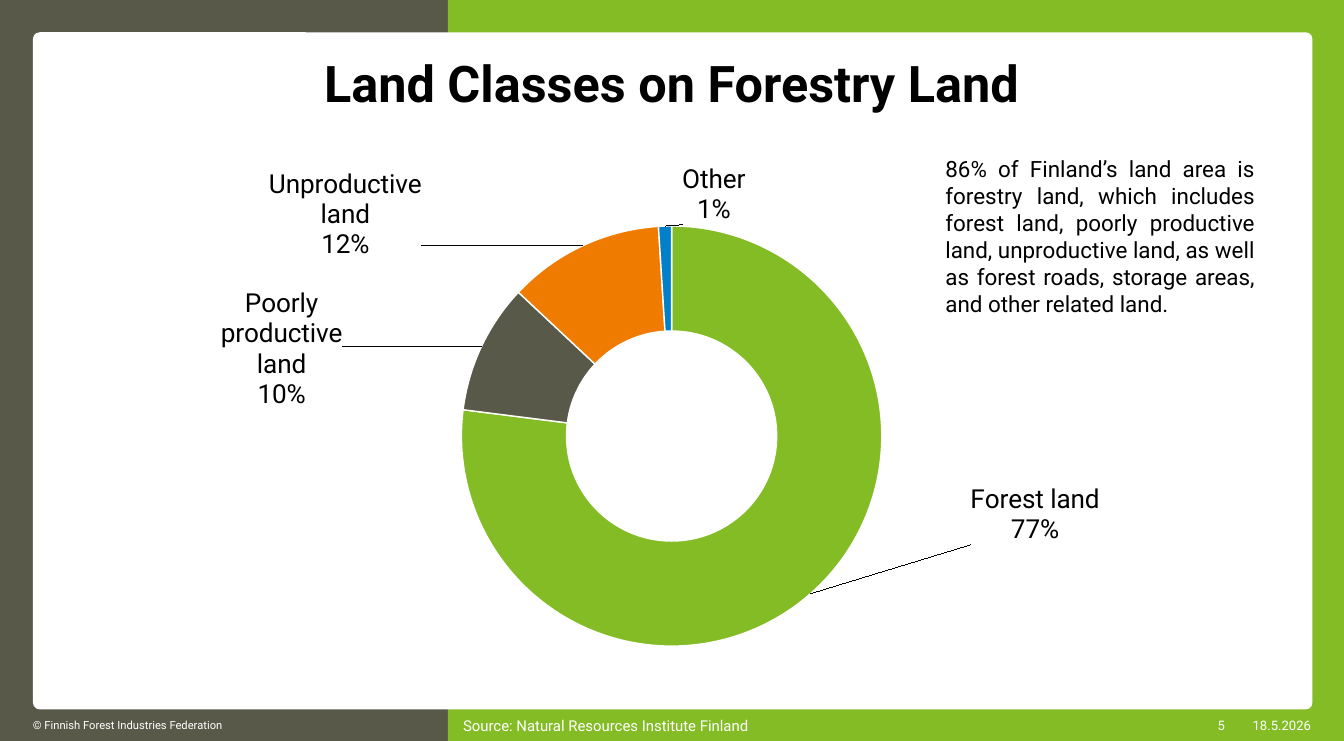
from copy import deepcopy
from dataclasses import dataclass

from pptx import Presentation
from pptx.chart.data import CategoryChartData
from pptx.dml.color import RGBColor
from pptx.enum.chart import XL_CHART_TYPE
from pptx.enum.shapes import MSO_SHAPE
from pptx.enum.text import MSO_ANCHOR, MSO_AUTO_SIZE, PP_ALIGN
from pptx.oxml import parse_xml
from pptx.util import Inches, Pt

DOUGHNUT = XL_CHART_TYPE.DOUGHNUT
RECTANGLE, ROUNDED = MSO_SHAPE.RECTANGLE, MSO_SHAPE.ROUNDED_RECTANGLE
TOP, MIDDLE = MSO_ANCHOR.TOP, MSO_ANCHOR.MIDDLE
LEFT, CENTER, RIGHT, JUSTIFY = PP_ALIGN.LEFT, PP_ALIGN.CENTER, PP_ALIGN.RIGHT, PP_ALIGN.JUSTIFY
NO_AUTOFIT = MSO_AUTO_SIZE.NONE
SLIDE_WIDTH, SLIDE_HEIGHT = Inches(20), Inches(11.02)
TITLE_ONLY_LAYOUT = 5
SPLIT = 33.33
FOOTER_TOP, FOOTER_HEIGHT = 95.74, 4.26
CHART_NAMESPACE = "http://schemas.openxmlformats.org/drawingml/2006/chart"
EXTENSION_NAMESPACE = "http://schemas.microsoft.com/office/drawing/2012/chart"


@dataclass(frozen=True)
class Theme:
    """Colours and type sizes of the slide."""

    font: str = "Roboto"
    green: str = "84BC26"
    grey: str = "595949"
    orange: str = "EF7C00"
    blue: str = "0080C8"
    white: str = "FFFFFF"
    black: str = "000000"
    title: int = 54
    label: int = 28
    body: int = 24
    source: int = 16
    meta: int = 14
    copyright: int = 12


THEME = Theme()

LAND_CLASSES = [
    ("Forest land", 0.77, THEME.green, (0.22, -0.08), (0.13, 0.15)),
    ("Poorly productive land", 0.10, THEME.grey, (-0.21, -0.04), (0.12, 0.26)),
    ("Unproductive land", 0.12, THEME.orange, (-0.22, -0.16), (0.15, 0.2)),
    ("Other", 0.01, THEME.blue, (0.04, -0.17), (0.1, 0.14)),
]
FOOTER = [
    ("© Finnish Forest Industries Federation", 2.45, 30.9, THEME.copyright, LEFT),
    ("Source: Natural Resources Institute Finland", 34.45, 31.1, THEME.source, LEFT),
    ("5", 88.45, 2.7, THEME.meta, RIGHT),
    ("18.5.2026", 92.1, 5.45, THEME.meta, RIGHT),
]


def area(left, top, width, height):
    """Turn percentages of the slide into lengths."""
    return (
        round(SLIDE_WIDTH * left / 100),
        round(SLIDE_HEIGHT * top / 100),
        round(SLIDE_WIDTH * width / 100),
        round(SLIDE_HEIGHT * height / 100),
    )


def style_font(font, size, color, bold=False):
    """Apply the theme typeface with a size and colour."""
    font.name = THEME.font
    font.size = Pt(size)
    font.bold = bold
    font.color.rgb = RGBColor.from_string(color)


def write_text(shape, text, size, color, alignment, anchor, bold=False):
    """Write one formatted paragraph into a shape."""
    frame = shape.text_frame
    frame.text = text
    frame.word_wrap = True
    frame.auto_size = NO_AUTOFIT
    frame.vertical_anchor = anchor
    paragraph = frame.paragraphs[0]
    paragraph.alignment = alignment
    style_font(paragraph.runs[0].font, size, color, bold)


def add_panel(slide, preset, place, color):
    """Add a flat filled panel."""
    shape = slide.shapes.add_shape(preset, *area(*place))
    shape.shadow.inherit = False
    shape.fill.solid()
    shape.fill.fore_color.rgb = RGBColor.from_string(color)
    shape.line.fill.background()
    return shape


def add_footer_text(slide, text, left, width, size, alignment):
    """Add one entry of the footer band."""
    box = slide.shapes.add_textbox(*area(left, FOOTER_TOP, width, FOOTER_HEIGHT))
    write_text(box, text, size, THEME.white, alignment, MIDDLE)
    frame = box.text_frame
    frame.margin_left = frame.margin_top = frame.margin_right = frame.margin_bottom = 0


def set_title(slide, text):
    """Place and format the title placeholder."""
    title = slide.shapes.title
    title.left, title.top, title.width, title.height = area(6.15, 7.44, 87.65, 13.16)
    write_text(title, text, THEME.title, THEME.black, CENTER, TOP, bold=True)
    title.text_frame.paragraphs[0].line_spacing = 0.9


def chart_xml(content):
    """Parse a chart element written with the c prefix."""
    name, rest = content.split(">", 1)
    return parse_xml(f'<c:{name} xmlns:c="{CHART_NAMESPACE}">{rest}</c:{name}>')


def set_plot_area(chart, left, top, width, height):
    """Fix the inner plot area as shares of the chart."""
    plot_area = chart.element.xpath("c:chart/c:plotArea")[0]
    for layout in plot_area.xpath("c:layout"):
        plot_area.remove(layout)
    plot_area.insert(0, chart_xml(
        'layout><c:manualLayout><c:layoutTarget val="inner"/>'
        '<c:xMode val="edge"/><c:yMode val="edge"/>'
        f'<c:x val="{left}"/><c:y val="{top}"/><c:w val="{width}"/><c:h val="{height}"/>'
        "</c:manualLayout>"
    ))


def make_label(shared_parts, index, offset, size):
    """Build a point label shifted from its segment and sized to wrap."""
    label = chart_xml(
        f'dLbl><c:idx val="{index}"/><c:layout><c:manualLayout>'
        f'<c:x val="{offset[0]}"/><c:y val="{offset[1]}"/></c:manualLayout></c:layout>'
    )
    for part in shared_parts:
        label.append(deepcopy(part))
    label.append(chart_xml(
        'extLst><c:ext uri="{CE6537A1-D6FC-4f65-9D91-7224C49458BB}" '
        f'xmlns:c15="{EXTENSION_NAMESPACE}"><c15:layout><c:manualLayout>'
        f'<c:w val="{size[0]}"/><c:h val="{size[1]}"/></c:manualLayout></c15:layout></c:ext>'
    ))
    return label


def add_labels(series):
    """Show category and value beside each segment with leader lines."""
    labels = series.data_labels
    labels.show_value = labels.show_category_name = True
    labels.number_format = "0%"
    labels.number_format_is_linked = False
    style_font(labels.font, THEME.label, THEME.black)
    element = labels._element
    element.xpath("c:showBubbleSize")[0].addnext(chart_xml("separator>\n"))
    shared_parts = element.xpath("*[not(self::c:showLeaderLines)]")
    for index, (_, _, _, offset, size) in enumerate(LAND_CLASSES):
        element.insert(index, make_label(shared_parts, index, offset, size))


def add_land_chart(slide):
    """Add the doughnut chart of land classes."""
    data = CategoryChartData(number_format="0%")
    data.categories = [land[0] for land in LAND_CLASSES]
    data.add_series("Series 1", [land[1] for land in LAND_CLASSES])
    place = area(6.15, 20.5, 87.65, 66.79)
    chart = slide.shapes.add_chart(DOUGHNUT, *place, data).chart
    chart.has_legend = chart.has_title = False
    style_font(chart.font, 10, THEME.grey)
    plot = chart.plots[0]
    plot.vary_by_categories = True
    series = plot.series[0]
    for index, land in enumerate(LAND_CLASSES):
        segment = series.points[index].format
        segment.fill.solid()
        segment.fill.fore_color.rgb = RGBColor.from_string(land[2])
        segment.line.color.rgb = RGBColor.from_string(THEME.white)
        segment.line.width = Pt(1.5)
    chart.element.xpath(".//c:holeSize")[0].set("val", "60")
    set_plot_area(chart, 0.32, 0.15, 0.36, 0.85)
    add_labels(series)


def main():
    """Build and save the slide."""
    presentation = Presentation()
    presentation.slide_width, presentation.slide_height = SLIDE_WIDTH, SLIDE_HEIGHT
    slide = presentation.slides.add_slide(presentation.slide_layouts[TITLE_ONLY_LAYOUT])
    add_panel(slide, RECTANGLE, (0, 0, SPLIT, 100), THEME.grey)
    add_panel(slide, RECTANGLE, (SPLIT, 0, 100 - SPLIT, 100), THEME.green)
    card = add_panel(slide, ROUNDED, (2.45, 4.36, 95.2, 91.38), THEME.white)
    card.adjustments[0] = 0.01
    for entry in FOOTER:
        add_footer_text(slide, *entry)
    set_title(slide, "Land Classes on Forestry Land")
    slide.shapes._spTree.append(slide.shapes.title._element)
    add_land_chart(slide)
    note = slide.shapes.add_textbox(*area(69.85, 20.5, 24, 22.87))
    write_text(
        note,
        "86% of Finland’s land area is forestry land, which includes forest land, "
        "poorly productive land, unproductive land, as well as forest roads, "
        "storage areas, and other related land.",
        THEME.body, THEME.black, JUSTIFY, TOP,
    )
    presentation.save("out.pptx")


if __name__ == "__main__":
    main()
